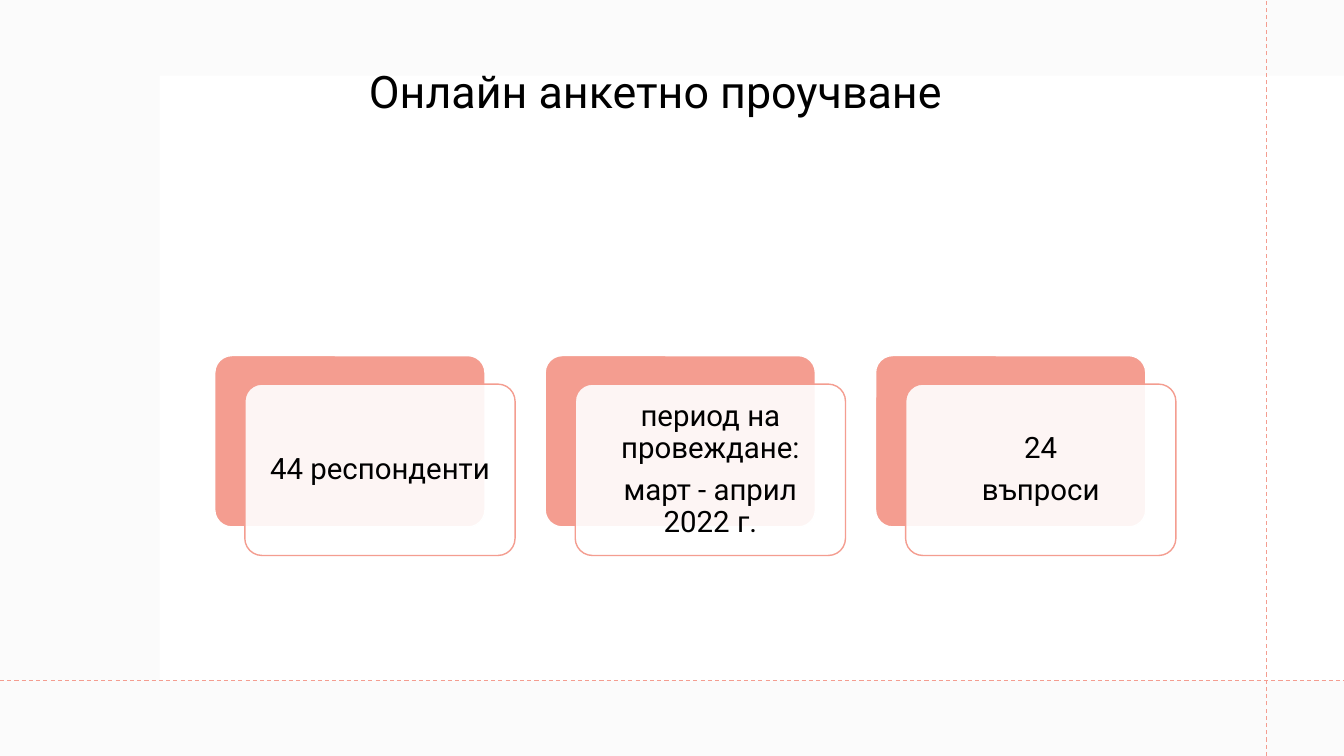
from dataclasses import dataclass

from lxml.etree import SubElement
from pptx import Presentation
from pptx.dml.color import RGBColor
from pptx.enum.dml import MSO_LINE
from pptx.enum.shapes import MSO_CONNECTOR, MSO_SHAPE
from pptx.enum.text import MSO_ANCHOR, MSO_AUTO_SIZE, PP_ALIGN
from pptx.oxml.ns import qn
from pptx.util import Pt


@dataclass(frozen=True)
class Theme:
    coral: RGBColor = RGBColor(0xF4, 0x9D, 0x90)
    white: RGBColor = RGBColor(0xFF, 0xFF, 0xFF)
    grey: RGBColor = RGBColor(0xF4, 0xF4, 0xF4)
    text: RGBColor = RGBColor(0, 0, 0)
    font: str = "Roboto"
    title_size: int = 32
    card_size: int = 21


THEME = Theme()
SLIDE_WIDTH, SLIDE_HEIGHT = 960, 540
CARDS = [
    "44 респонденти",
    "период на провеждане:\nмарт - април 2022 г.",
    "24\nвъпроси",
]


def add_block(slide, kind, box, fill, line=None, opacity=100):
    """Add a filled shape; box is left, top, width and height in points."""
    block = slide.shapes.add_shape(kind, *map(Pt, box))
    block.shadow.inherit = False
    block.fill.solid()
    block.fill.fore_color.rgb = fill
    if opacity < 100:
        color = block.fill._xPr.find(qn("a:solidFill"))[0]
        SubElement(color, qn("a:alpha"), val=str(opacity * 1000))
    if line is None:
        block.line.fill.background()
    else:
        block.line.color.rgb = line
        block.line.width = Pt(1)
    return block


def style_text(frame, size, alignment):
    for paragraph in frame.paragraphs:
        paragraph.alignment = alignment
        for run in paragraph.runs:
            run.font.name = THEME.font
            run.font.size = Pt(size)
            run.font.color.rgb = THEME.text


def add_guide(slide, start, end):
    guide = slide.shapes.add_connector(
        MSO_CONNECTOR.STRAIGHT, *map(Pt, (*start, *end)))
    guide.line.color.rgb = THEME.coral
    guide.line.width = Pt(0.75)
    guide.line.dash_style = MSO_LINE.DASH
    SubElement(guide.element.spPr, qn("a:effectLst"))


def add_backdrop(slide, box):
    """Add the grey tint, the white panel and the two dashed guides."""
    left, top, width, height = box
    panel_left, panel_top, panel_bottom = left + 114, top + 54, top + height - 54
    guide_x = left + width - 55
    add_block(slide, MSO_SHAPE.RECTANGLE, box, THEME.grey, opacity=35)
    add_block(slide, MSO_SHAPE.RECTANGLE,
              (panel_left, panel_top, left + width - panel_left,
               panel_bottom - panel_top), THEME.white)
    add_guide(slide, (guide_x, top + height), (guide_x, top))
    add_guide(slide, (left, panel_bottom), (left + width, panel_bottom))


def add_card(slide, box, caption):
    """Add a coral plate with a translucent captioned plate shifted over it."""
    left, top, width, height = box
    back = add_block(slide, MSO_SHAPE.ROUNDED_RECTANGLE, box,
                     THEME.coral, THEME.white)
    front = add_block(slide, MSO_SHAPE.ROUNDED_RECTANGLE,
                      (left + 21.5, top + 20.4, width, height),
                      THEME.white, THEME.coral, opacity=90)
    back.adjustments[0] = front.adjustments[0] = 0.1
    frame = front.text_frame
    frame.word_wrap = True
    frame.vertical_anchor = MSO_ANCHOR.MIDDLE
    frame.margin_left = frame.margin_right = Pt(6.3)
    frame.margin_top = frame.margin_bottom = Pt(6.3)
    frame.text = caption
    style_text(frame, THEME.card_size, PP_ALIGN.CENTER)
    for paragraph in frame.paragraphs:
        paragraph.line_spacing = 0.9
        paragraph.space_after = Pt(0.35 * THEME.card_size)


def add_card_row(slide, box, captions):
    left, top, width, height = box
    step = 236
    card_width = width - step * (len(captions) - 1)
    for index, caption in enumerate(captions):
        add_card(slide, (left + index * step, top, card_width, height), caption)


def place_title(slide, box, wording):
    """Fill the title placeholder and bring it in front of the backdrop."""
    title = slide.shapes.title
    title.left, title.top, title.width, title.height = map(Pt, box)
    frame = title.text_frame
    frame.text = wording
    frame.word_wrap = True
    frame.auto_size = MSO_AUTO_SIZE.SHAPE_TO_FIT_TEXT
    frame.vertical_anchor = MSO_ANCHOR.TOP
    style_text(frame, THEME.title_size, PP_ALIGN.LEFT)
    slide.shapes.element.append(title.element)


def main():
    presentation = Presentation()
    presentation.slide_width = Pt(SLIDE_WIDTH)
    presentation.slide_height = Pt(SLIDE_HEIGHT)
    slide = presentation.slides.add_slide(presentation.slide_layouts[5])
    add_backdrop(slide, (0, 0, SLIDE_WIDTH, SLIDE_HEIGHT))
    add_card_row(slide, (153.4, 254, 665, 122.4), CARDS)
    place_title(slide, (256.3, 41.8, 480, 46), "Онлайн анкетно проучване")
    presentation.save("out.pptx")


if __name__ == "__main__":
    main()
